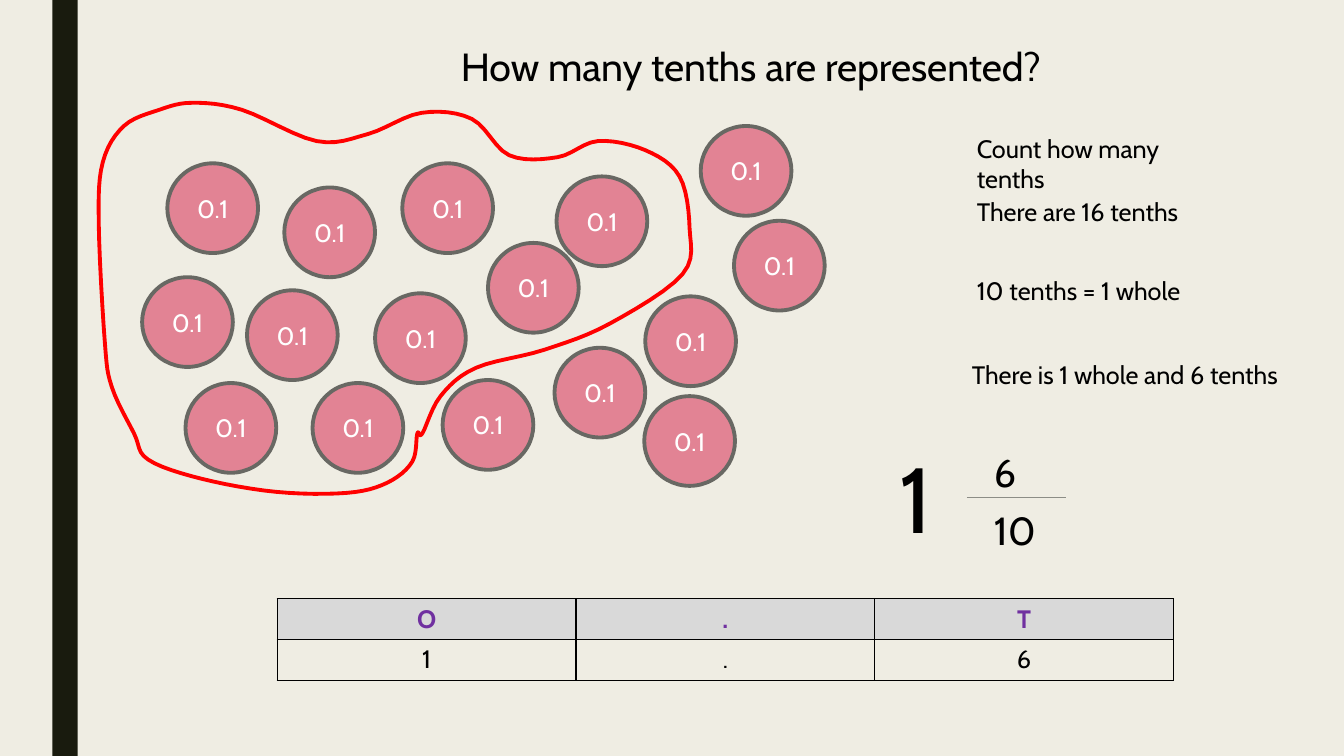
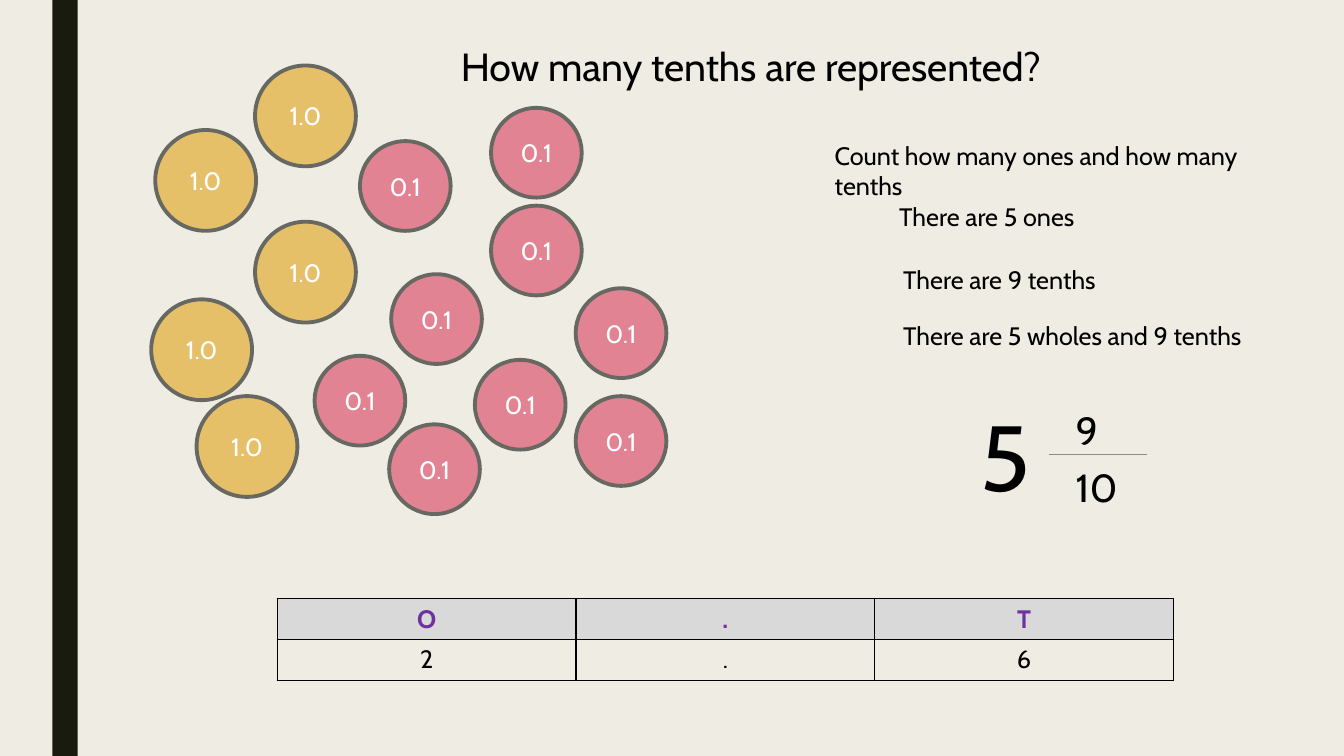
"""Build two slides on counting tenths with place value counters."""
from lxml import etree
from pptx import Presentation
from pptx import util as u
from pptx.dml.color import RGBColor
from pptx.enum import shapes, text
from pptx.oxml import ns

Inches = u.Inches
rgb = RGBColor.from_string
INK, PINK, GOLD, EDGE = "000000", "E28394", "E6C069", "686863"
TITLE = "How many tenths are represented?"
COUNTERS = {"0.1": (PINK, 0.9, 0.89), "1.0": (GOLD, 1, 1)}
LOOP = [
    (4.14, 4.3), (4.09, 4.58), (3.84, 4.79), (3.44, 4.89), (2.74, 4.88),
    (2, 4.75), (1.47, 4.56), (1.33, 4.3), (1.11, 3.84), (1.04, 3.39),
    (0.98, 2.21), (1.02, 1.61), (1.23, 1.25), (1.58, 1.09), (1.91, 1.02),
    (2.4, 1.09), (3.14, 1.4), (3.65, 1.33), (4.18, 1.12), (4.68, 1.18),
    (5.05, 1.54), (5.53, 1.56), (5.93, 1.4), (6.4, 1.49), (6.74, 1.75),
    (6.84, 2.26), (6.77, 2.72), (6.05, 3.21), (5.4, 3.47), (4.72, 3.65),
    (4.37, 3.93), (4.19, 4.3),
]
SLIDES = [
    {
        "counters": {"0.1": [
            (1.66, 1.62), (2.82, 1.86), (1.41, 2.75), (2.45, 2.88),
            (3.99, 1.62), (3.72, 2.91), (4.84, 2.41), (1.84, 3.8),
            (3.1, 3.8), (4.39, 3.77), (5.5, 3.45), (5.52, 1.75),
            (6.4, 2.94), (6.95, 1.25), (7.28, 2.19), (6.39, 3.93)]},
        "loop": LOOP,
        "steps": [
            ("Count how many tenths", 9.59, 1.27, 2.7),
            ("There are 16 tenths", 9.59, 1.9, 2.36),
            ("10 tenths = 1 whole", 9.59, 2.68, 2.33),
            ("There is 1 whole and 6 tenths", 9.54, 3.52, 3.36)],
        "mixed": ("1", "6", "10", 8.82, 4.33),
        "digits": "1.6",
    },
    {
        "counters": {
            "0.1": [
                (3.57, 1.4), (4.87, 2.04), (3.88, 2.72), (4.87, 1.07),
                (3.12, 3.53), (4.71, 3.57), (5.71, 2.86), (3.86, 4.21),
                (5.71, 3.93)],
            "1.0": [
                (1.54, 1.29), (1.5, 2.97), (2.53, 2.2), (2.53, 0.65),
                (1.95, 3.93)]},
        "loop": [],
        "steps": [
            ("Count how many ones and how many tenths", 8.18, 1.34, 4.88),
            ("There are 5 ones", 8.82, 1.95, 2.01),
            ("There are 9 tenths", 8.86, 2.57, 2.23),
            ("There are 5 wholes and 9 tenths", 8.86, 3.13, 3.71)],
        "mixed": ("5", "9", "10", 9.63, 3.91),
        "digits": "2.6",
    },
]


def write(tf, words, size=18, color=INK, bold=False, align="LEFT", anchor="TOP"):
    tf.word_wrap = True
    tf.vertical_anchor = text.MSO_ANCHOR[anchor]
    p = tf.paragraphs[0]
    p.alignment = text.PP_ALIGN[align]
    r = p.add_run()
    r.text = words
    r.font.name, r.font.size, r.font.bold = "Cabin", u.Pt(size), bold
    r.font.color.rgb = rgb(color)


def paint(shape, fill=None, line=None):
    shape.shadow.inherit = False
    if fill:
        shape.fill.solid()
        shape.fill.fore_color.rgb = rgb(fill)
    else:
        shape.fill.background()
    if line:
        shape.line.color.rgb = rgb(line)
        shape.line.width = u.Pt(2.75)
    else:
        shape.line.fill.background()


prs = Presentation()
prs.slide_width, prs.slide_height = Inches(13.33), Inches(7.5)
layout = prs.slide_layouts[5]
back = prs.slide_master.background.fill
back.solid()
back.fore_color.rgb = rgb("EFEDE3")
head = layout.placeholders[0]
head.left, head.top = Inches(4.47), Inches(0.37)
head.width, head.height = Inches(6.1), Inches(0.57)

for n, page in enumerate(SLIDES):
    s = prs.slides.add_slide(layout)
    if n == 0:
        bar = s.shapes.add_shape(shapes.MSO_SHAPE.RECTANGLE, Inches(0.52), 0,
                                 Inches(0.25), prs.slide_height)
        paint(bar, "191B0E")
        layout.shapes.element.append(bar.element)

    tf = s.shapes.title.text_frame
    tf.auto_size = text.MSO_AUTO_SIZE.NONE
    write(tf, TITLE, size=28)

    for label, places in page["counters"].items():
        fill, w, h = COUNTERS[label]
        for x, y in places:
            sp = s.shapes.add_shape(shapes.MSO_SHAPE.OVAL, Inches(x), Inches(y),
                                    Inches(w), Inches(h))
            paint(sp, fill, EDGE)
            write(sp.text_frame, label, color="FFFFFF", align="CENTER", anchor="MIDDLE")

    if page["loop"]:
        knots, steps, curve = page["loop"], 6, []
        for i in range(len(knots)):
            near = [knots[(i + k) % len(knots)] for k in (-1, 0, 1, 2)]
            for t in (k / steps for k in range(steps)):
                curve.append([
                    Inches(b + t / 2 * (c - a + t * (2 * a - 5 * b + 4 * c - d
                                                     + t * (3 * (b - c) + d - a))))
                    for a, b, c, d in zip(*near)])
        builder = s.shapes.build_freeform(*curve[0])
        builder.add_line_segments(curve[1:], close=True)
        paint(builder.convert_to_shape(), line="FF0000")

    whole, top, bottom, x, y = page["mixed"]
    boxes = [(*step, 0.4, 18) for step in page["steps"]]
    boxes += [(whole, x, y, 0.75, 1.21, 66),
              (top, x + 0.94, y + 0.07, 0.43, 0.57, 28),
              (bottom, x + 0.94, y + 0.64, 0.65, 0.57, 28)]
    for words, left, y0, w, h, size in boxes:
        sp = s.shapes.add_textbox(Inches(left), Inches(y0), Inches(w), Inches(h))
        write(sp.text_frame, words, size=size)

    rule = s.shapes.add_connector(shapes.MSO_CONNECTOR.STRAIGHT, Inches(x + 0.77),
                                  Inches(y + 0.6), Inches(x + 1.75), Inches(y + 0.6))
    rule.line.color.rgb = rgb("8C8D86")
    rule.line.width = u.Pt(0.5)
    etree.SubElement(rule._element.spPr, ns.qn("a:effectLst"))

    table = s.shapes.add_table(2, 3, Inches(2.75), Inches(5.94),
                               Inches(8.89), Inches(0.81)).table
    table.first_row = table.horz_banding = False
    for i, row in enumerate(["O.T", page["digits"]]):
        for j, words in enumerate(row):
            cell = table.cell(i, j)
            tcPr = cell._tc.get_or_add_tcPr()
            for side in ("lnL", "lnR", "lnT", "lnB"):
                ln = etree.SubElement(tcPr, ns.qn("a:" + side), w=str(u.Pt(1)))
                solid = etree.SubElement(ln, ns.qn("a:solidFill"))
                etree.SubElement(solid, ns.qn("a:srgbClr"), val=INK)
            if i == 0:
                cell.fill.solid()
                cell.fill.fore_color.rgb = rgb("D9D9D9")
                cell.vertical_anchor = text.MSO_ANCHOR.MIDDLE
            else:
                cell.fill.background()
            write(cell.text_frame, words, color=INK if i else "7030A0",
                  bold=i == 0, align="CENTER")

prs.save("out.pptx")
